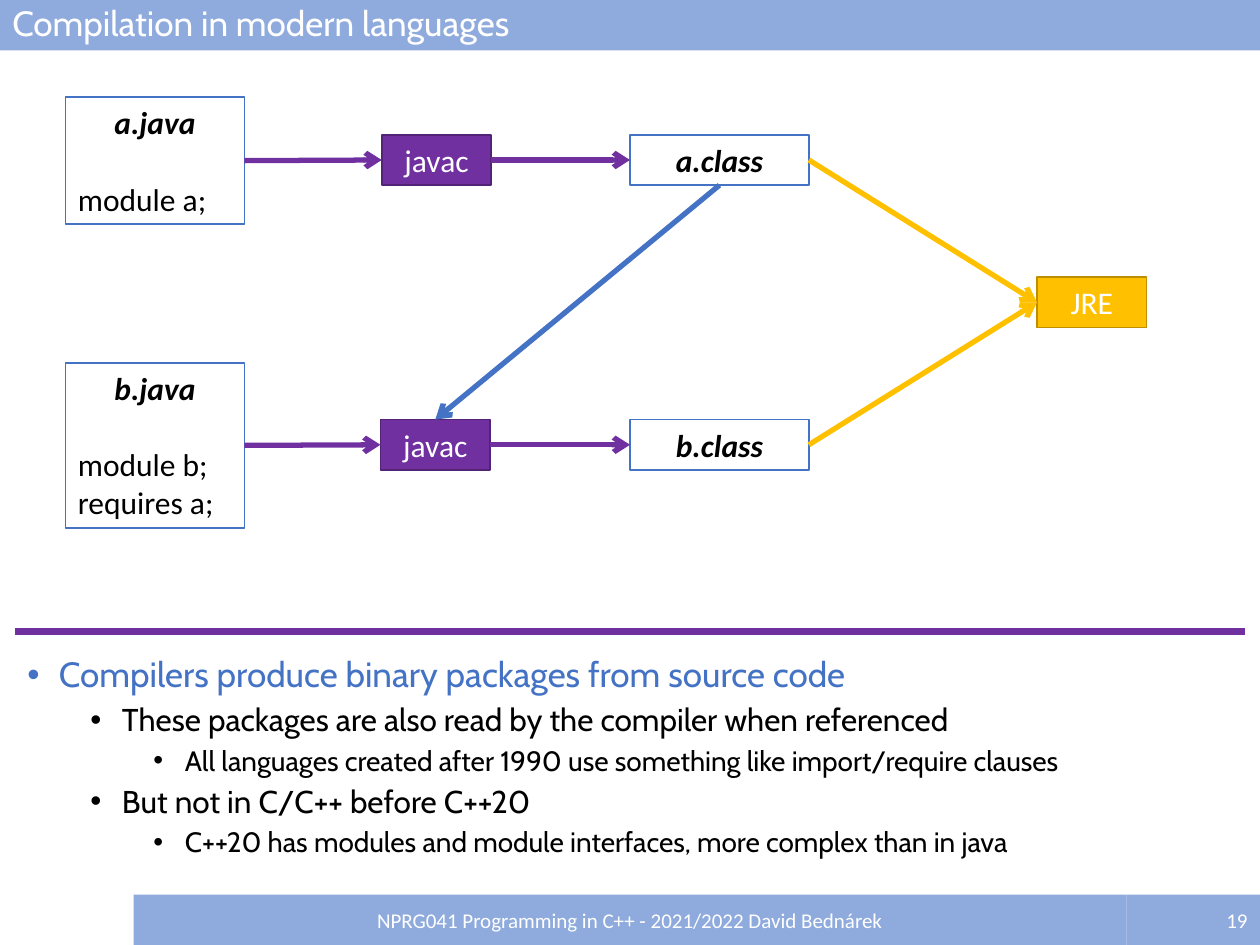
from pptx import Presentation
from pptx.dml.color import RGBColor as Rgb
from pptx.enum.shapes import MSO_CONNECTOR as Conn, MSO_SHAPE as Kind
from pptx.enum.text import MSO_ANCHOR as Anchor, PP_ALIGN as Align
from pptx.oxml.ns import qn
from pptx.util import Inches, Pt
from lxml.etree import SubElement as Sub

HUES = {
    "bar": "8FAADC", "blue": "4472C4", "plum": "7030A0", "dusk": "532476",
    "gold": "FFC000", "rust": "BD8E00", "white": "FFFFFF", "black": "000000",
}
TOP, LEFT, BASE, RIGHT = range(4)


def hue(name):
    return Rgb.from_string(HUES[name])


def style(para, size, color, face="Calibri", strong=False):
    font = para.font
    font.name, font.size = face, Pt(size)
    font.color.rgb = hue(color)
    font.bold = font.italic = strong


def panel(slide, box, fill, edge=None):
    shape = slide.shapes.add_shape(Kind.RECTANGLE, *map(Inches, box))
    shape.shadow.inherit = False
    shape.fill.solid()
    shape.fill.fore_color.rgb = hue(fill)
    if edge:
        shape.line.color.rgb = hue(edge)
        shape.line.width = Pt(1)
    else:
        shape.line.fill.background()
    return shape


def band(slide, box, text, align, size=12, face="Calibri"):
    frame = panel(slide, box, "bar").text_frame
    frame.word_wrap = True
    frame.vertical_anchor = Anchor.MIDDLE
    para = frame.paragraphs[0]
    para.text, para.alignment = text, align
    style(para, size, "white", face)
    return para


def node(slide, box, name, fill, edge, ink="white", strong=False, code=()):
    shape = panel(slide, box, fill, edge)
    frame = shape.text_frame
    frame.vertical_anchor = Anchor.TOP
    frame.word_wrap = True
    head = frame.paragraphs[0]
    head.text, head.alignment = name, Align.CENTER
    style(head, 18, ink, strong=strong)
    for i, text in enumerate(code):
        para = frame.add_paragraph()
        para.text, para.alignment = text, Align.LEFT
        para.space_before = Pt(0 if i else 22)
        style(para, 18, ink)
    return shape


def line(slide, ends, color, width):
    link = slide.shapes.add_connector(Conn.STRAIGHT, *map(Inches, ends))
    link.line.color.rgb = hue(color)
    link.line.width = Pt(width)
    Sub(link._element.spPr, qn("a:effectLst"))
    return link


def arrow(slide, start, out, end, into, color):
    link = line(slide, (0, 0, 1, 1), color, 3)
    link.begin_connect(start, out)
    link.end_connect(end, into)
    Sub(link.line._get_or_add_ln(), qn("a:tailEnd"), type="arrow")


def diagram(slide, x, y, w, h):
    wide, slim, tall = 1.42, 0.87, 0.4
    jre = node(slide, (x + w - slim, y + 1.43, slim, tall), "JRE", "gold", "rust")
    rows = [
        ("a", 0, 1.01, 0.3, 2.51, ["module a;"]),
        ("b", 2.11, h - 2.11, 2.56, 2.5, ["module b;", "requires a;"]),
    ]
    made = []
    for name, top, high, mid, tab, code in rows:
        src = node(slide, (x, y + top, wide, high), name + ".java",
                   "white", "blue", "black", True, code)
        tool = node(slide, (x + tab, y + mid, slim, tall), "javac", "plum", "dusk")
        unit = node(slide, (x + 4.48, y + mid, wide, tall), name + ".class",
                    "white", "blue", "black", True)
        arrow(slide, src, RIGHT, tool, LEFT, "plum")
        arrow(slide, tool, RIGHT, unit, LEFT, "plum")
        arrow(slide, unit, RIGHT, jre, LEFT, "gold")
        made.append((tool, unit))
    arrow(slide, made[0][1], BASE, made[1][0], TOP, "blue")


def notes(slide, x, y, w, h):
    line(slide, (x, y, x + w, y), "plum", 4)
    box = slide.shapes.add_textbox(*map(Inches, (x, y + 0.16, w, h - 0.16)))
    frame = box.text_frame
    frame.word_wrap = True
    items = [
        (0, "Compilers produce binary packages from source code"),
        (1, "These packages are also read by the compiler when referenced"),
        (2, "All languages created after 1990 use something like import/require clauses"),
        (1, "But not in C/C++ before C++20"),
        (2, "C++20 has modules and module interfaces, more complex than in java"),
    ]
    for i, (level, text) in enumerate(items):
        para = frame.add_paragraph() if i else frame.paragraphs[0]
        para.text, para.level = text, level
        para.line_spacing = 0.9
        para.space_before = Pt(5 if level else 10)
        style(para, 20 - 2 * level, "black" if level else "blue", "Cabin")
        props = para._p.get_or_add_pPr()
        props.set("marL", str(Inches(0.25 + 0.5 * level)))
        props.set("indent", str(Inches(-0.25)))
        Sub(props, qn("a:buFont"), typeface="Arial")
        Sub(props, qn("a:buChar"), char="•")
        props.append(props.find(qn("a:defRPr")))


def footer(slide, x, y, w, h):
    page = 1.06
    band(slide, (x + w - page, y, page, h), "19", Align.RIGHT)
    band(slide, (x, y, w - page, h),
         "NPRG041 Programming in C++ - 2021/2022 David Bednárek", Align.CENTER)


def main():
    deck = Presentation()
    deck.slide_width, deck.slide_height = Inches(10), Inches(7.5)
    slide = deck.slides.add_slide(deck.slide_layouts[6])
    notes(slide, 0.12, 5.01, 9.76, 2.05)
    title = band(slide, (0, 0, 10, 0.4), "Compilation in modern languages",
                 Align.LEFT, 20, "Cabin")
    title.line_spacing = 0.9
    footer(slide, 1.06, 7.1, 8.94, 0.4)
    diagram(slide, 0.52, 0.77, 8.58, 3.42)
    deck.save("out.pptx")


if __name__ == "__main__":
    main()
